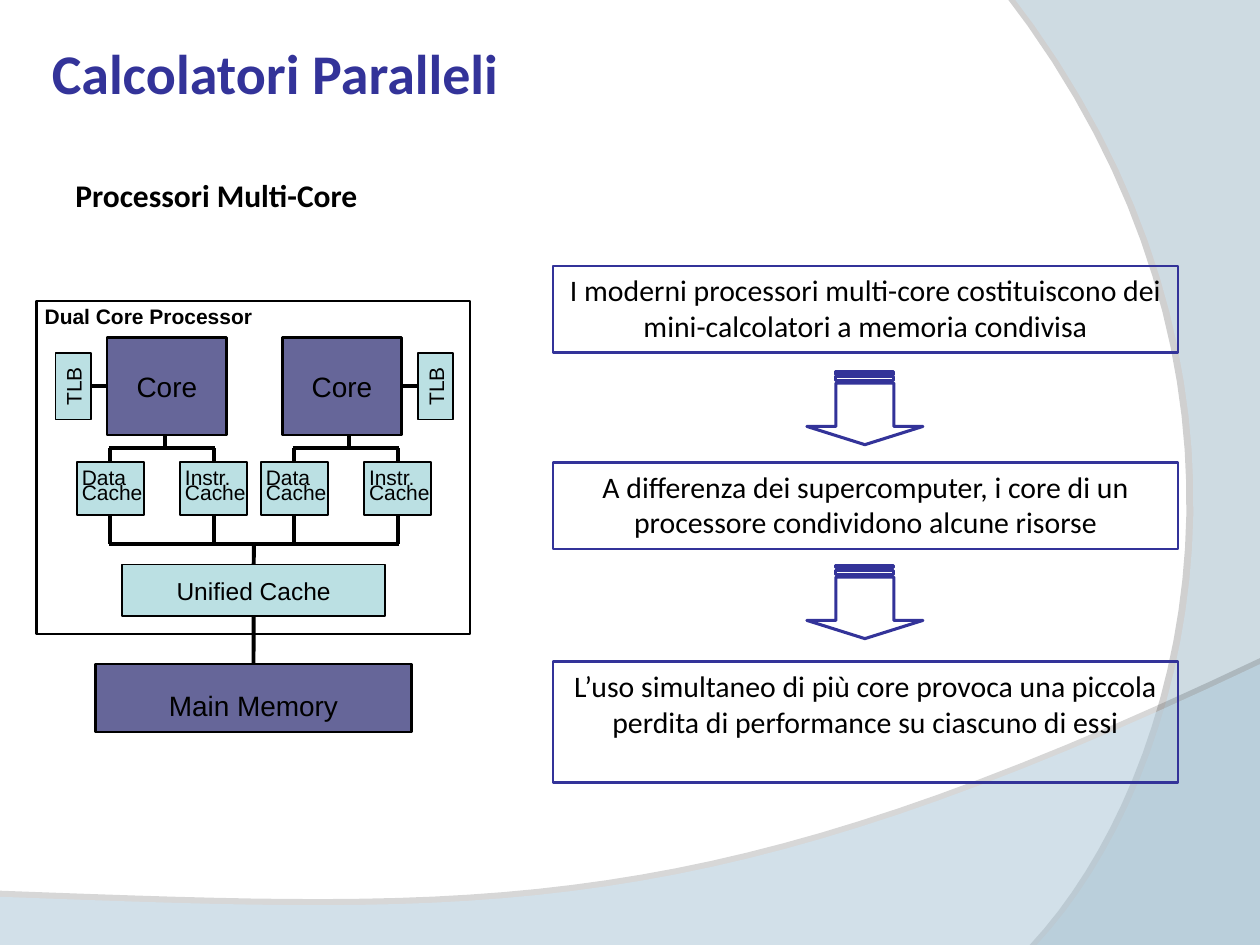
from lxml.etree import SubElement
from pptx import Presentation
from pptx.dml.color import RGBColor
from pptx.enum.shapes import MSO_CONNECTOR, MSO_SHAPE
from pptx.enum.text import MSO_ANCHOR, MSO_AUTO_SIZE, PP_ALIGN
from pptx.oxml.ns import qn
from pptx.util import Cm, Pt

TITLE = "Calcolatori Paralleli"
TOPIC = "Processori Multi-Core"
CHIP = "Dual Core Processor"
CACHES = ["Data\nCache", "Instr.\nCache"]
UNITS = [
    {"core": 2.16, "tlb": 1.12, "shift": 0, "sides": (3, 1)},
    {"core": 5.69, "tlb": 8.43, "shift": 3.71, "sides": (1, 3)},
]
NOTES = [
    ("I moderni processori multi-core costituiscono dei mini-calcolatori a memoria condivisa", 5.36, 1.75),
    ("A differenza dei supercomputer, i core di un processore condividono alcune risorse", 9.32, 1.75),
    ("L’uso simultaneo di più core provoca una piccola perdita di performance su ciascuno di essi", 13.34, 2.44),
]
ARROWS = [7.06, 10.97]
WAVES = [
    {"edge": [(25.83, -0.18), (25.83, 19.05), (20.9, 19.05)],
     "curve": [(24.03, 15.7), (26.31, 7.49), (20.32, -0.2)],
     "alpha": 40, "shade": 45, "dist": 4, "dir": 180},
    {"edge": [(0, 18.08), (0, 19.25), (25.4, 19.25), (25.4, 13.39)],
     "curve": [(14.2, 18.72), (9.93, 18.44), (0, 18.08)],
     "alpha": 45, "shade": 35, "dist": 3.5, "dir": 270},
]
BLACK, BLUE, SLATE, TEAL, SKY = "000000", "333399", "666699", "BBE0E3", "CCECFF"
LEFT, MID = PP_ALIGN.LEFT, PP_ALIGN.CENTER
TOP, BAR, BUS = 9.32, 9.03, 10.97
STEPS = 32

deck = Presentation()
deck.slide_width, deck.slide_height = Cm(25.4), Cm(19.05)
slide = deck.slides.add_slide(deck.slide_layouts[5])
shapes = slide.shapes


def tint(code):
    return RGBColor.from_string(code)


def write(shape, text, size, font="Arial", color=BLACK, bold=False, align=MID,
          anchor=MSO_ANCHOR.TOP, pad=None, lead=None):
    frame = shape.text_frame
    frame.text = text
    frame.word_wrap = True
    frame.auto_size = MSO_AUTO_SIZE.NONE
    frame.vertical_anchor = anchor
    if pad:
        (frame.margin_left, frame.margin_top,
         frame.margin_right, frame.margin_bottom) = map(Cm, pad)
    for row, para in enumerate(frame.paragraphs):
        para.alignment = align
        if lead:
            para.line_spacing = lead
        if row:
            para.space_before = Pt(size / 2)
        for run in para.runs:
            run.font.name, run.font.size, run.font.bold = font, Pt(size), bold
            run.font.color.rgb = tint(color)


def label(area, text, size, **style):
    write(shapes.add_textbox(*map(Cm, area)), text, size, **style)


def box(area, fill=None, line=BLACK, width=1.0, kind=MSO_SHAPE.RECTANGLE):
    shape = shapes.add_shape(kind, *map(Cm, area))
    shape.shadow.inherit = False
    if fill:
        shape.fill.solid()
        shape.fill.fore_color.rgb = tint(fill)
    else:
        shape.fill.background()
    shape.line.color.rgb = tint(line)
    shape.line.width = Pt(width)
    return shape


def wire(start, end, head=None, tail=None):
    link = shapes.add_connector(MSO_CONNECTOR.STRAIGHT, *map(Cm, start + end))
    if head:
        link.begin_connect(*head)
    if tail:
        link.end_connect(*tail)
    link.line.color.rgb = tint(BLACK)
    link.line.width = Pt(2.25)
    SubElement(link._element.spPr, qn("a:effectLst"))


def bezier(points, t):
    s = 1 - t
    parts = (s ** 3, 3 * s * s * t, 3 * s * t * t, t ** 3)
    return tuple(sum(p * pt[axis] for p, pt in zip(parts, points)) for axis in (0, 1))


def wave(data):
    edge = data["edge"]
    bend = [edge[-1]] + data["curve"]
    dots = edge + [bezier(bend, n / STEPS) for n in range(1, STEPS + 1)]
    dots = [(Cm(x), Cm(y)) for x, y in dots]
    pen = shapes.build_freeform(*dots[0])
    pen.add_line_segments(dots[1:], close=True)
    shape = pen.convert_to_shape()
    shape.fill.solid()
    shape.fill.fore_color.rgb = tint(SKY)
    shape.line.fill.background()
    shape.shadow.inherit = False
    props = shape._element.spPr
    color = props.find(qn("a:solidFill")).find(qn("a:srgbClr"))
    SubElement(color, qn("a:alpha"), val=str(data["alpha"] * 1000))
    shade = SubElement(props.find(qn("a:effectLst")), qn("a:outerShdw"),
                       blurRad="0", dist=str(int(Pt(data["dist"]))),
                       dir=str(data["dir"] * 60000), algn="ctr", rotWithShape="0")
    color = SubElement(shade, qn("a:srgbClr"), val=BLACK)
    SubElement(color, qn("a:alpha"), val=str(data["shade"] * 1000))


title = shapes.title
title.left, title.top, title.width, title.height = map(Cm, (0.79, 0.64, 20.17, 1.6))
write(title, TITLE, 32, font="Calibri", color=BLUE, bold=True, align=LEFT)
label((1.27, 3.43, 11.43, 1.02), TOPIC, 18, font="Calibri", bold=True, align=LEFT)

box((0.74, 6.07, 8.74, 6.71), width=1.5)
label((0.2, 5.99, 5.59, 0.76), CHIP, 12, bold=True)

for unit in UNITS:
    core = box((unit["core"], 6.81, 2.41, 1.96), SLATE, width=1.5)
    write(core, "Core", 16, anchor=MSO_ANCHOR.MIDDLE)
    tlb = box((unit["tlb"], 7.12, 0.71, 1.34), TEAL)
    write(tlb, "TLB", 12, anchor=MSO_ANCHOR.MIDDLE, pad=(0, 0, 0, 0))
    tlb.text_frame._txBody.bodyPr.set("vert", "vert270")
    near, far = unit["sides"]
    wire((0, 0), (0, 0), (tlb, near), (core, far))
    shift = unit["shift"]
    wire((3.33 + shift, 8.77), (3.33 + shift, BAR))
    wire((2.19 + shift, BAR), (4.34 + shift, BAR))
    for col, text in enumerate(CACHES):
        x = 1.55 + shift + 2.08 * col
        cache = box((x, TOP, 1.35, 1.07), TEAL)
        write(cache, text, 12, align=LEFT, pad=(0.1, 0.38, 0, 0), lead=0.2)
        mid = x + 0.675
        wire((mid, BAR), (mid, TOP), tail=(cache, 0))
        wire((mid, TOP), (mid, BUS), head=(cache, 2))

wire((2.19, BUS), (8.05, BUS))
shared = box((2.46, 11.38, 5.31, 1.04), TEAL)
write(shared, "Unified Cache", 14, anchor=MSO_ANCHOR.MIDDLE)
wire((5.12, BUS), (5.12, 11.38), tail=(shared, 0))
store = box((1.92, 13.39, 6.38, 1.37), SLATE, width=1.5)
write(store, "Main Memory", 16, anchor=MSO_ANCHOR.MIDDLE, pad=(0.25, 0.4, 0.25, 0.13))
wire((0, 0), (0, 0), (shared, 2), (store, 0))

for data in WAVES:
    wave(data)

for text, y, high in NOTES:
    write(box((11.15, y, 12.6, high), line=BLUE, width=1.5), text, 17, font="Calibri")
for y in ARROWS:
    arrow = box((16.7, y, 1.47, 2.34), line=BLUE, width=1.75,
                kind=MSO_SHAPE.STRIPED_RIGHT_ARROW)
    arrow.adjustments[0], arrow.adjustments[1] = 0.5, 0.25
    arrow.rotation = 90

deck.save("out.pptx")
